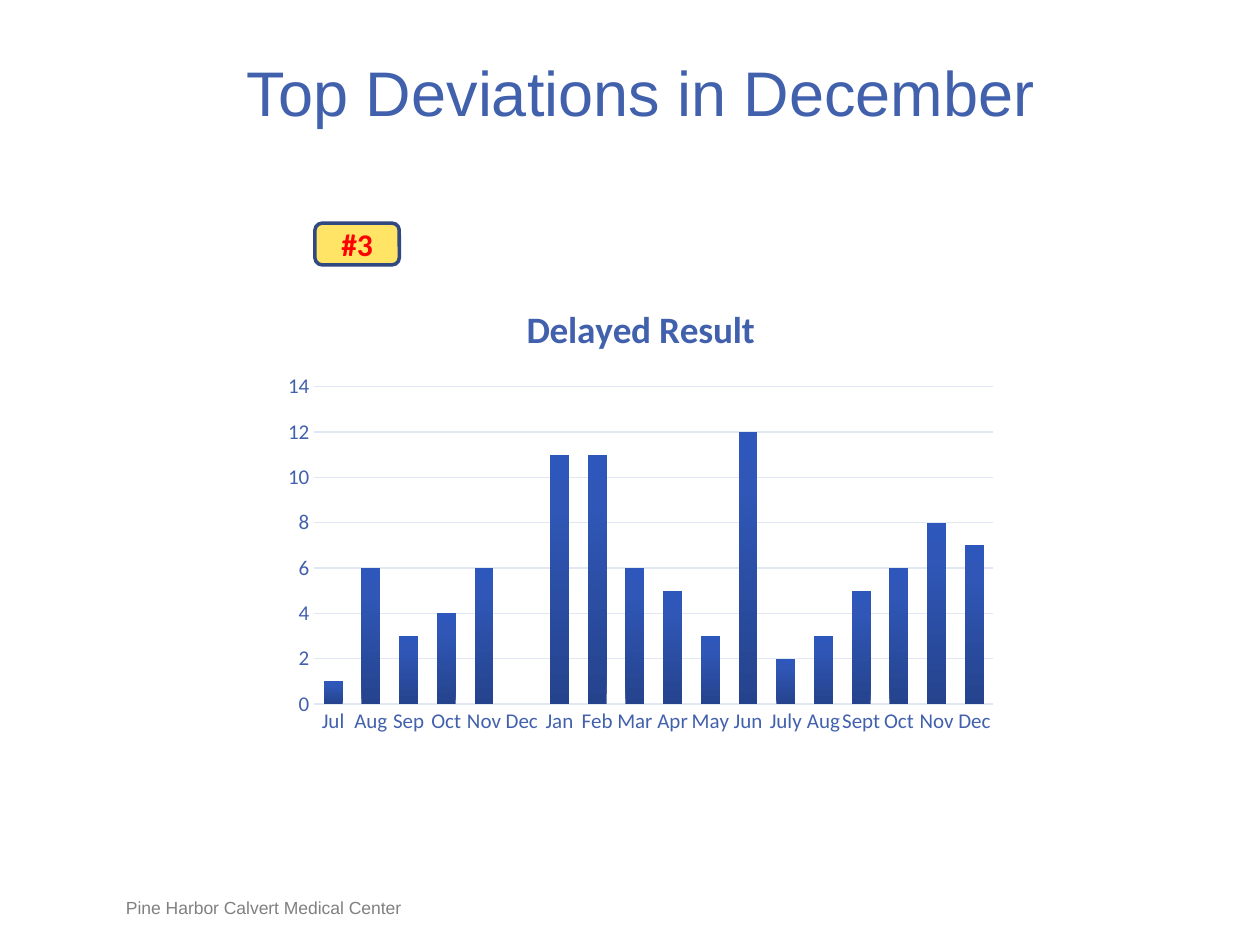
import copy

import pptx
import pptx.chart.data
import pptx.dml.color
import pptx.enum.chart
import pptx.enum.shapes
import pptx.enum.text
import pptx.util

RGBColor = pptx.dml.color.RGBColor
Cm = pptx.util.Cm
Pt = pptx.util.Pt
ALIGN = pptx.enum.text.PP_ALIGN
ANCHOR = pptx.enum.text.MSO_ANCHOR

BLUE = RGBColor(0x42, 0x61, 0xAD)
NAVY = RGBColor(0x31, 0x48, 0x80)
YELLOW = RGBColor(0xFF, 0xE4, 0x66)
RED = RGBColor(0xFF, 0x00, 0x00)
GRAY = RGBColor(0x80, 0x80, 0x80)
GRID = RGBColor(0xE2, 0xE7, 0xF4)
BAR_STOPS = [
    (0, RGBColor(0x25, 0x43, 0x8D)),
    (0.8, RGBColor(0x30, 0x57, 0xB7)),
    (1, RGBColor(0x2E, 0x57, 0xBB)),
]

MONTHS = ["Jul", "Aug", "Sep", "Oct", "Nov", "Dec", "Jan", "Feb", "Mar",
          "Apr", "May", "Jun", "July", "Aug", "Sept", "Oct", "Nov", "Dec"]
DELAYS = [1, 6, 3, 4, 6, None, 11, 11, 6, 5, 3, 12, 2, 3, 5, 6, 8, 7]


class SlideBuilder:
    heading_font = "Arial"
    chart_font = "Calibri"

    def __init__(self, prs):
        self.s = prs.slides.add_slide(prs.slide_layouts[5])

    def style(self, font, name, size, color, bold=False):
        font.name = name
        font.size = Pt(size)
        font.color.rgb = color
        font.bold = bold

    def set_text(self, tf, text, name, size, color, align, anchor, bold=False):
        tf.word_wrap = True
        tf.vertical_anchor = anchor
        tf.margin_left = tf.margin_right = tf.margin_top = tf.margin_bottom = 0
        p = tf.paragraphs[0]
        p.alignment = align
        r = p.add_run()
        r.text = text
        self.style(r.font, name, size, color, bold)

    def title(self, text, x, y, w, h):
        sp = self.s.shapes.title
        sp.left, sp.top, sp.width, sp.height = Cm(x), Cm(y), Cm(w), Cm(h)
        self.set_text(sp.text_frame, text, self.heading_font, 36, BLUE,
                      ALIGN.CENTER, ANCHOR.TOP)

    def footer(self, text, x, y, w, h):
        sp = self.s.shapes.add_textbox(Cm(x), Cm(y), Cm(w), Cm(h))
        self.set_text(sp.text_frame, text, self.heading_font, 10, GRAY,
                      ALIGN.LEFT, ANCHOR.BOTTOM)

    def badge(self, text, x, y, w, h):
        sp = self.s.shapes.add_shape(
            pptx.enum.shapes.MSO_SHAPE.ROUNDED_RECTANGLE,
            Cm(x), Cm(y), Cm(w), Cm(h))
        sp.shadow.inherit = False
        sp.fill.solid()
        sp.fill.fore_color.rgb = YELLOW
        sp.line.color.rgb = NAVY
        sp.line.width = Pt(2)
        self.set_text(sp.text_frame, text, self.chart_font, 18, RED,
                      ALIGN.CENTER, ANCHOR.MIDDLE, True)

    def grid_line(self, line):
        line.color.rgb = GRID
        line.width = Pt(0.75)

    def gradient(self, fill, stops, angle):
        fill.gradient()
        fill.gradient_angle = angle
        first = fill.gradient_stops[0]._gs
        first.addnext(copy.deepcopy(first))
        for stop, (position, color) in zip(fill.gradient_stops, stops):
            stop.position = position
            stop.color.rgb = color

    def column_chart(self, name, cats, vals, x, y, w, h):
        data = pptx.chart.data.CategoryChartData()
        data.categories = cats
        data.add_series(name, vals)
        chart = self.s.shapes.add_chart(
            pptx.enum.chart.XL_CHART_TYPE.COLUMN_CLUSTERED,
            Cm(x), Cm(y), Cm(w), Cm(h), data).chart
        chart.font.name = self.chart_font
        chart.font.size = Pt(10)
        chart.has_legend = False
        chart.has_title = True
        r = chart.chart_title.text_frame.paragraphs[0].add_run()
        r.text = name
        self.style(r.font, self.chart_font, 21.3, BLUE, True)
        chart.chart_title.include_in_layout = False
        for axis in (chart.category_axis, chart.value_axis):
            axis.major_tick_mark = pptx.enum.chart.XL_TICK_MARK.NONE
            axis.minor_tick_mark = pptx.enum.chart.XL_TICK_MARK.NONE
            self.style(axis.tick_labels.font, self.chart_font, 12, BLUE)
        self.grid_line(chart.category_axis.format.line)
        chart.value_axis.format.line.fill.background()
        self.grid_line(chart.value_axis.major_gridlines.format.line)
        chart.value_axis.minimum_scale = 0
        chart.value_axis.maximum_scale = 14
        chart.value_axis.major_unit = 2
        plot = chart.plots[0]
        plot.gap_width = 100
        plot.overlap = -24
        plot.vary_by_categories = False
        self.gradient(plot.series[0].format.fill, BAR_STOPS, 90)


def main():
    prs = pptx.Presentation()
    prs.slide_width = Cm(25.4)
    prs.slide_height = Cm(19.05)
    b = SlideBuilder(prs)
    b.footer("Pine Harbor Calvert Medical Center", 2.54, 18.08, 8.05, 0.43)
    b.title("Top Deviations in December", 3.61, 1.07, 18.62, 3.07)
    b.badge("#3", 6.35, 4.5, 1.7, 0.84)
    b.column_chart("Delayed Result", MONTHS, DELAYS, 5.51, 5.66, 14.81, 9.32)
    prs.save("out.pptx")


if __name__ == "__main__":
    main()
